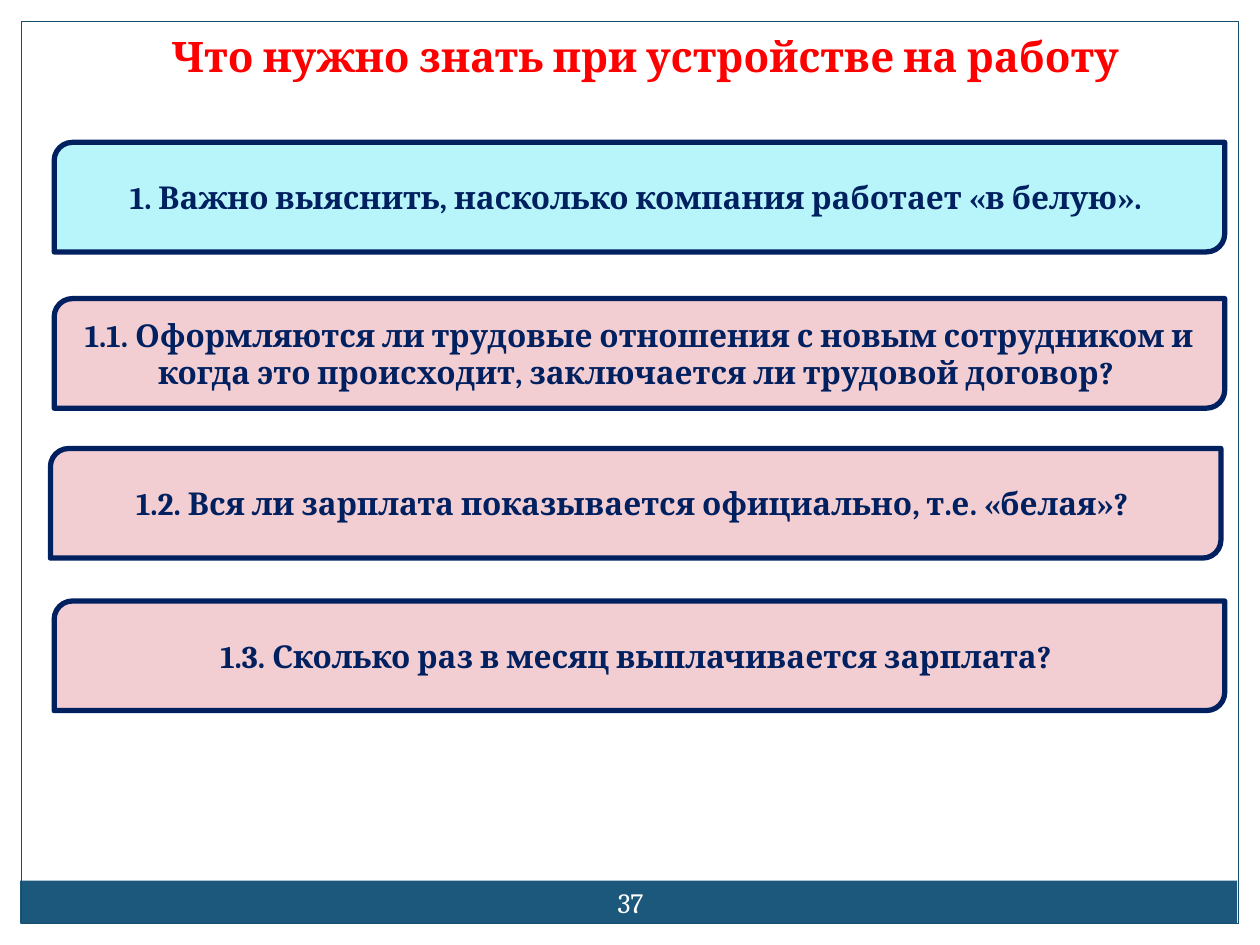
from pptx import Presentation
from pptx.dml.color import RGBColor
from pptx.enum.shapes import MSO_SHAPE
from pptx.enum.text import MSO_ANCHOR, PP_ALIGN
from pptx.util import Inches, Pt

RECT = MSO_SHAPE.RECTANGLE
CARD = MSO_SHAPE.ROUND_2_DIAG_RECTANGLE
TOP, MIDDLE = MSO_ANCHOR.TOP, MSO_ANCHOR.MIDDLE
CENTER = PP_ALIGN.CENTER

FONT = "Cambria"
COLORS = {
    "navy": "002060", "aqua": "B7F5FB", "pink": "F2CED2", "red": "FF0000",
    "white": "FFFFFF", "band": "1B587C", "frame": "184E6D",
}
TITLE = "Что нужно знать при устройстве на работу"
NUMBER = "37"
CARDS = [
    (0.43, 1.13, "aqua", "1. Важно выяснить, насколько компания работает «в белую». "),
    (0.43, 2.37, "pink", "1.1. Оформляются ли трудовые отношения с новым сотрудником и "
     "когда это происходит, заключается ли трудовой договор? "),
    (0.4, 3.56, "pink", "1.2. Вся ли зарплата показывается официально, т.е. «белая»? "),
    (0.43, 4.77, "pink", "1.3. Сколько раз в месяц выплачивается зарплата? "),
]
CARD_W, CARD_H = 9.29, 0.87


def color(name):
    return RGBColor.from_string(COLORS[name])


def write(shape, text, size, ink, bold=True, anchor=MIDDLE):
    frame = shape.text_frame
    frame.word_wrap = True
    frame.vertical_anchor = anchor
    para = frame.paragraphs[0]
    para.text = text
    para.alignment = CENTER
    font = para.font
    font.name, font.size, font.bold = FONT, Pt(size), bold
    font.color.rgb = color(ink)
    return frame


def draw(slide, kind, box, fill=None, line=None, width=0):
    shape = slide.shapes.add_shape(kind, *map(Inches, box))
    shape.shadow.inherit = False
    if fill:
        shape.fill.solid()
        shape.fill.fore_color.rgb = color(fill)
    else:
        shape.fill.background()
    if line:
        shape.line.color.rgb = color(line)
        shape.line.width = Pt(width)
    else:
        shape.line.fill.background()
    return shape


def label(slide, box, *args, **opts):
    return write(slide.shapes.add_textbox(*map(Inches, box)), *args, **opts)


def main():
    deck = Presentation()
    deck.slide_width, deck.slide_height = Inches(10), Inches(7.5)
    slide = deck.slides.add_slide(deck.slide_layouts[6])

    draw(slide, RECT, (0.16, 6.99, 9.66, 0.34), fill="band")
    draw(slide, RECT, (0.17, 0.17, 9.66, 7.16), line="frame", width=0.75)

    for left, top, fill, text in CARDS:
        card = draw(slide, CARD, (left, top, CARD_W, CARD_H), fill, "navy", 3)
        write(card, text, 18, "navy")

    label(slide, (1.22, 0.19, 7.8, 0.91), TITLE, 24, "red", anchor=TOP)
    page = label(slide, (4.67, 6.92, 0.67, 0.48), NUMBER, 16, "white", bold=False)
    page.margin_left = page.margin_right = Inches(0.05)
    page.margin_top = page.margin_bottom = Inches(0.05)

    deck.save("out.pptx")


if __name__ == "__main__":
    main()
